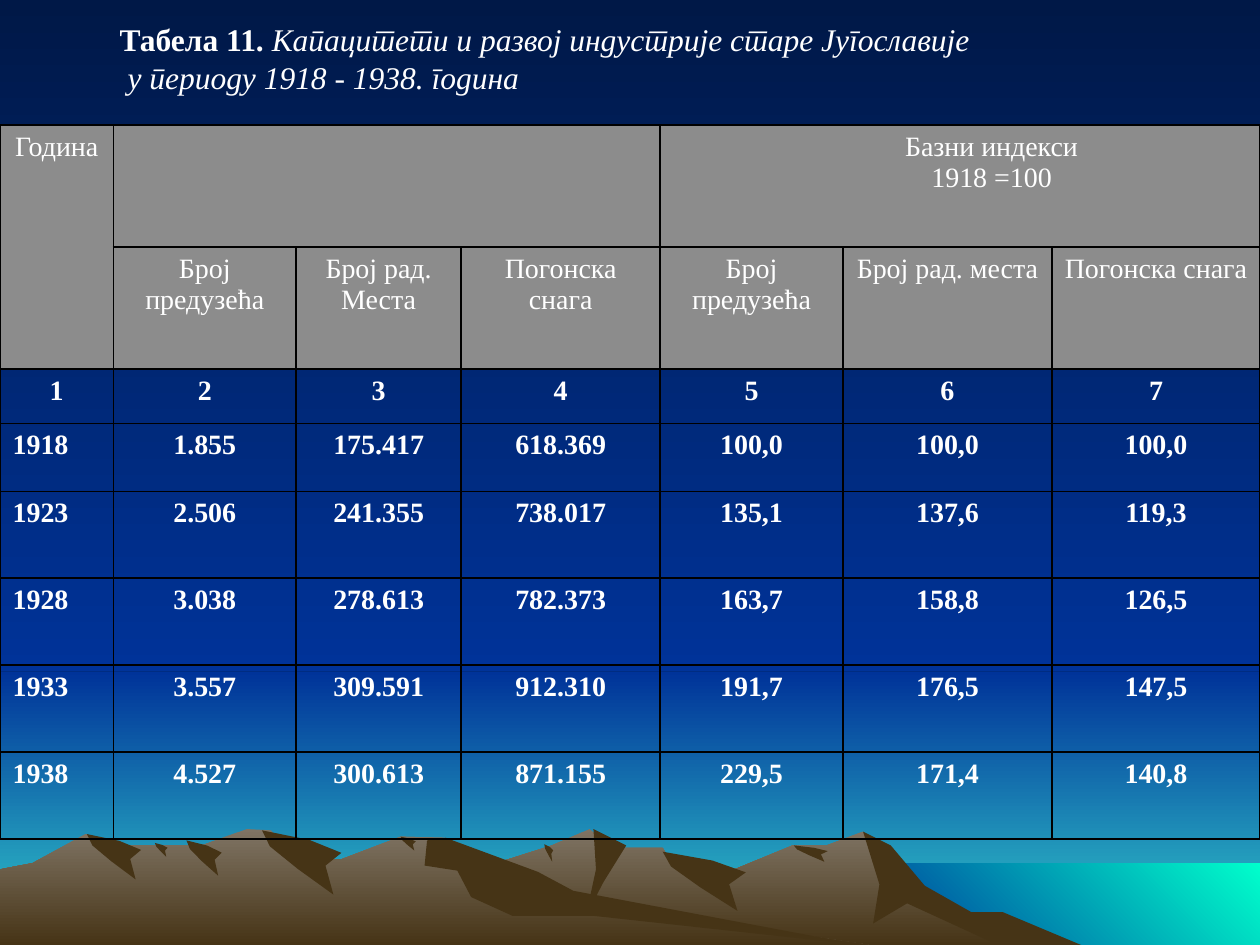
"""Build a slide with a table of industrial capacity over a mountain landscape."""
import pptx
import pptx.dml.color
import pptx.enum.shapes
import pptx.enum.text
import pptx.oxml
import pptx.oxml.ns
import pptx.util

Inches = pptx.util.Inches
ALIGN = pptx.enum.text.PP_ALIGN

SLIDE_WIDTH, SLIDE_HEIGHT = 10, 7.5
HORIZON, WATERLINE, SHORE = 5.33, 6.85, 6.83
FONT = "Times New Roman"
WHITE, BLACK, HEADER_GREY = "FFFFFF", "000000", "8C8C8C"
NIGHT, BLUE, TURQUOISE, AQUA = "001847", "003399", "33CCCC", "00FFCC"
ROCK, SHADE = "7F7464", "463416"
DOWNWARD, RISING = 90, 315

COLUMN_WIDTHS = [0.9, 1.45, 1.31, 1.58, 1.45, 1.66, 1.65]
HEADER_ROWS = 2
ROW_HEIGHTS = [0.97] * HEADER_ROWS + [0.43, 0.54] + [0.69] * 4
MERGES = {"year": ((0, 0), (1, 0)), "capacity": ((0, 1), (0, 3)), "index": ((0, 4), (0, 6))}
TOP_HEADER = ["Година", "", "", "", "Базни индекси\n1918 =100", "", ""]
MEASURES = ["", "Број предузећа", "Број рад. Места", "Погонска снага",
            "Број предузећа", "Број рад. места", "Погонска снага"]
YEARLY_FIGURES = [
    ["1918", "1.855", "175.417", "618.369", "100,0", "100,0", "100,0"],
    ["1923", "2.506", "241.355", "738.017", "135,1", "137,6", "119,3"],
    ["1928", "3.038", "278.613", "782.373", "163,7", "158,8", "126,5"],
    ["1933", "3.557", "309.591", "912.310", "191,7", "176,5", "147,5"],
    ["1938", "4.527", "300.613", "871.155", "229,5", "171,4", "140,8"],
]

EAST_SKYLINE = [(2.58, 7.5), (3.27, 7.09), (3.94, 6.85), (4.38, 6.71), (4.68, 6.58),
                (4.86, 6.73), (5.26, 6.73), (5.36, 6.9), (5.66, 6.97), (6.29, 6.71),
                (6.56, 6.71), (6.85, 6.6), (7.23, 6.98), (7.64, 7.23), (8.21, 7.5)]
WEST_SKYLINE = [(0, 6.9), (0.26, 6.85), (0.68, 6.62), (0.94, 6.71), (1.6, 6.71),
                (1.96, 6.58), (2.15, 6.59), (2.36, 6.81), (2.71, 6.82), (3.18, 6.64),
                (3.54, 6.65), (4.32, 7.12), (6.9, 7.5)]
EAST_FLANKS = {
    "last peak": [(6.85, 6.6), (7.07, 6.71), (7.34, 7.03), (7.71, 7.24), (7.96, 7.24),
                  (8.58, 7.5), (7.92, 7.5), (7.2, 7.17), (6.93, 7.33), (6.98, 7.02)],
    "middle peak": [(4.71, 6.58), (4.97, 6.71), (4.79, 7), (4.65, 7.27), (4.73, 6.9)],
}
WEST_FLANKS = {
    "long slope": [(3.39, 6.67), (3.54, 6.65), (4.27, 6.92), (4.55, 7.07), (6.83, 7.5),
                   (4.72, 7.27), (4.07, 7.27), (3.74, 7.12), (3.63, 6.91), (3.37, 6.87)],
}
GULLY = [(0, 0), (0.6, 0.15), (1, 0.35), (0.8, 0.55), (0.9, 1), (0.45, 0.6), (0.1, 0.25)]
EAST_GULLIES = [(4.32, 6.7, 0.07, 0.14), (5.26, 6.76, 0.66, 0.47), (6.3, 6.71, 0.27, 0.13)]
WEST_GULLIES = [(0.69, 6.62, 0.43, 0.36), (1.23, 6.69, 0.1, 0.11), (1.48, 6.67, 0.28, 0.28),
                (2.08, 6.59, 0.63, 0.51), (3.18, 6.64, 0.12, 0.11)]


def rgb(color):
    """Return the colour for a hex string."""
    return pptx.dml.color.RGBColor.from_string(color)


def paint(fill, start, end=None, angle=DOWNWARD):
    """Fill with one hex colour, or with a gradient at a clockwise angle."""
    if end is None:
        fill.solid()
        fill.fore_color.rgb = rgb(start)
        return
    fill.gradient()
    fill.gradient_angle = 360 - angle
    for stop, color in zip(fill.gradient_stops, (start, end)):
        stop.color.rgb = rgb(color)


def finish(part, *colors):
    """Paint a landscape part and take away its outline and shadow."""
    paint(part.fill, *colors)
    part.line.fill.background()
    part.shadow.inherit = False


def add_band(slide, left, top, bottom, *colors):
    """Add a band of sky or water that reaches the right edge of the slide."""
    band = slide.shapes.add_shape(
        pptx.enum.shapes.MSO_SHAPE.RECTANGLE, Inches(left), Inches(top),
        Inches(SLIDE_WIDTH - left), Inches(bottom - top))
    finish(band, *colors)


def add_outline(slide, points, *colors):
    """Add a closed polygon through points given in inches."""
    start, *rest = [(Inches(x), Inches(y)) for x, y in points]
    builder = slide.shapes.build_freeform(*start)
    builder.add_line_segments(rest, close=True)
    finish(builder.convert_to_shape(), *colors)


def add_gully(slide, left, top, width, height):
    """Add a jagged shaded gully, scaled to a box."""
    points = [(left + x * width, top + y * height) for x, y in GULLY]
    add_outline(slide, points, SHADE)


def add_range(slide, skyline, flanks, gullies):
    """Add a mountain range: its lit body down to the slide edge, then its shade."""
    base = [(skyline[-1][0], SLIDE_HEIGHT), (skyline[0][0], SLIDE_HEIGHT)]
    add_outline(slide, skyline + base, ROCK, SHADE)
    for flank in flanks.values():
        add_outline(slide, flank, SHADE)
    for box in gullies:
        add_gully(slide, *box)


def add_landscape(slide):
    """Add sky, water and mountains from back to front."""
    paint(slide.background.fill, NIGHT, BLUE)
    add_band(slide, 0, HORIZON, SLIDE_HEIGHT, BLUE, TURQUOISE)
    add_band(slide, 0, 0, HORIZON, NIGHT, BLUE)
    add_band(slide, SHORE, WATERLINE, SLIDE_HEIGHT, BLUE, AQUA, RISING)
    add_range(slide, EAST_SKYLINE, EAST_FLANKS, EAST_GULLIES)
    add_range(slide, WEST_SKYLINE, WEST_FLANKS, WEST_GULLIES)


def write(paragraph, text, size=16, bold=False, italic=False, align=ALIGN.CENTER, indent=0):
    """Append a formatted Serbian run to a paragraph."""
    paragraph.alignment = align
    paragraph.space_before = pptx.util.Pt(0)
    paragraph._p.get_or_add_pPr().set("indent", str(Inches(indent)))
    run = paragraph.add_run()
    run.text = text
    run.font.name = FONT
    run.font.size = pptx.util.Pt(size)
    run.font.bold = bold
    run.font.italic = italic
    run.font.color.rgb = rgb(WHITE)
    run._r.get_or_add_rPr().set("lang", "sr-Cyrl-RS")


def add_title(slide):
    """Place the two-line heading in front of the landscape."""
    title = slide.shapes.title
    title.left, title.top, title.width, title.height = map(Inches, (0.35, 0.11, 9.29, 1))
    frame = title.text_frame
    frame.word_wrap = True
    frame.auto_size = pptx.enum.text.MSO_AUTO_SIZE.NONE
    frame.vertical_anchor = pptx.enum.text.MSO_ANCHOR.TOP
    subject, period = frame.paragraphs[0], frame.add_paragraph()
    heading = {"size": 18, "align": ALIGN.LEFT, "indent": 0.5}
    write(subject, "Табела 11. ", bold=True, **heading)
    write(subject, "Капацитети и развој индустрије старе Југославије", italic=True, **heading)
    write(period, " у периоду 1918 - 1938. година", italic=True, **heading)
    slide.shapes._spTree.append(title._element)


def add_borders(cell):
    """Give a cell thin black borders on all four sides."""
    properties = cell._tc.get_or_add_tcPr()
    for index, side in enumerate(("lnL", "lnR", "lnT", "lnB")):
        properties.insert(index, pptx.oxml.parse_xml(
            f'<a:{side} {pptx.oxml.ns.nsdecls("a")} w="{pptx.util.Pt(1)}"><a:solidFill>'
            f'<a:srgbClr val="{BLACK}"/></a:solidFill></a:{side}>'))


def fill_cell(cell, text, is_header, align):
    """Set the fill, borders and text of one cell."""
    if is_header:
        paint(cell.fill, HEADER_GREY)
    else:
        cell.fill.background()
    add_borders(cell)
    lines = text.split("\n") if text else []
    for number, line in enumerate(lines):
        paragraph = cell.text_frame.add_paragraph() if number else cell.text_frame.paragraphs[0]
        write(paragraph, line, bold=not is_header, align=align,
              indent=0.5 if len(lines) > 1 else 0)


def add_capacity_table(slide):
    """Add the table of capacities and base indices."""
    column_numbers = [str(number + 1) for number in range(len(COLUMN_WIDTHS))]
    rows = [TOP_HEADER, MEASURES, column_numbers] + YEARLY_FIGURES
    table = slide.shapes.add_table(len(rows), len(COLUMN_WIDTHS), 0, Inches(0.99),
                                   Inches(SLIDE_WIDTH), Inches(sum(ROW_HEIGHTS))).table
    table.first_row = table.horz_banding = False
    for column, width in zip(table.columns, COLUMN_WIDTHS):
        column.width = Inches(width)
    for r, (height, texts) in enumerate(zip(ROW_HEIGHTS, rows)):
        table.rows[r].height = Inches(height)
        for c, text in enumerate(texts):
            is_year = texts in YEARLY_FIGURES and c == 0
            fill_cell(table.cell(r, c), text, r < HEADER_ROWS,
                      ALIGN.JUSTIFY if is_year else ALIGN.CENTER)
    for first, last in MERGES.values():
        table.cell(*first).merge(table.cell(*last))


def main():
    """Build and save the slide."""
    deck = pptx.Presentation()
    deck.slide_width, deck.slide_height = Inches(SLIDE_WIDTH), Inches(SLIDE_HEIGHT)
    slide = deck.slides.add_slide(deck.slide_layouts[5])
    add_landscape(slide)
    add_title(slide)
    add_capacity_table(slide)
    deck.save("out.pptx")


if __name__ == "__main__":
    main()
